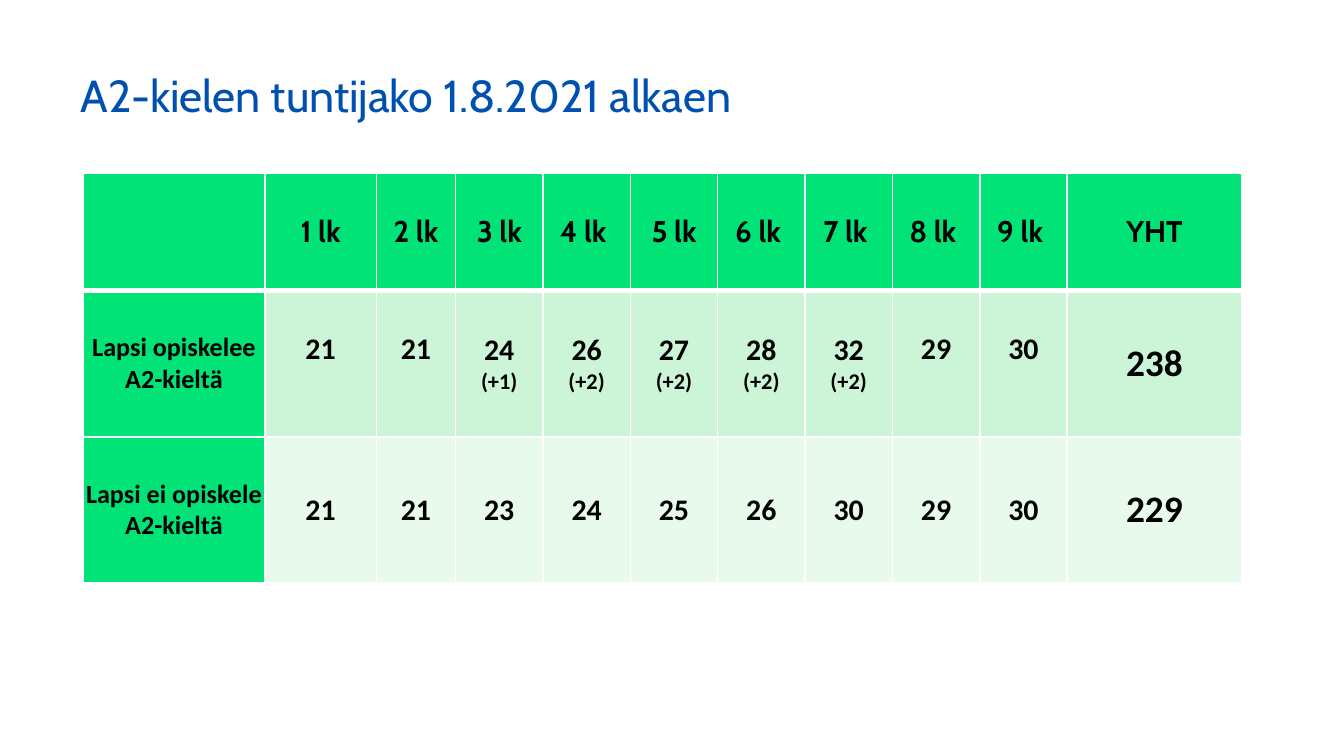
from lxml import etree
from pptx import Presentation
from pptx.dml.color import RGBColor
from pptx.enum.text import MSO_ANCHOR as Anchor, PP_ALIGN as Align
from pptx.oxml.ns import qn
from pptx.util import Inches, Pt


def color(hex_value):
    return RGBColor.from_string(hex_value)


def add_borders(cell, widths):
    """Draw white borders; widths are in points for left, right, top, bottom."""
    properties = cell._tc.get_or_add_tcPr()
    for side, width in zip("LRTB", widths):
        line = etree.SubElement(properties, qn(f"a:ln{side}"), w=str(Pt(width)))
        fill = etree.SubElement(line, qn("a:solidFill"))
        etree.SubElement(fill, qn("a:srgbClr"), val="FFFFFF")


GREEN = "01E376"
ROW_FILLS = [GREEN, "CCF4D6", "E7FAEC"]
COLUMN_WIDTHS = [1.35, 0.83, 0.59] + [0.65] * 7 + [1.3]
ROW_HEIGHTS = [0.87, 1.09, 1.09]
ROWS = [
    ["", "1 lk", "2 lk", "3 lk", "4 lk", "5 lk", "6 lk", "7 lk", "8 lk", "9 lk", "YHT"],
    ["Lapsi opiskelee A2-kieltä", "21", "21", "24\n(+1)", "26\n(+2)", "27\n(+2)",
     "28\n(+2)", "32\n(+2)", "29", "30", "238"],
    ["Lapsi ei opiskele A2-kieltä", "21", "21", "23", "24", "25", "26", "30", "29", "30", "229"],
]
SHIFTED_HEADERS = ("4 lk", "6 lk", "7 lk", "8 lk", "9 lk")

# Widescreen slide, 16:9
presentation = Presentation()
presentation.slide_width = Inches(10)
presentation.slide_height = Inches(10) * 9 // 16
slide = presentation.slides.add_slide(presentation.slide_layouts[5])

# Title
title = slide.shapes.title
title.left, title.top = Inches(0.5), Inches(0.23)
title.width, title.height = Inches(9), Inches(0.94)
title.text_frame.text = "A2-kielen tuntijako 1.8.2021 alkaen"
title.text_frame.vertical_anchor = Anchor.MIDDLE
paragraph = title.text_frame.paragraphs[0]
paragraph.alignment = Align.LEFT
paragraph.font.size = Pt(24)
paragraph.font.name = "Cabin"
paragraph.font.color.rgb = color("0050B0")

# Table grid
table = slide.shapes.add_table(
    len(ROWS), len(COLUMN_WIDTHS), Inches(0.62), Inches(1.29),
    Inches(sum(COLUMN_WIDTHS)), Inches(sum(ROW_HEIGHTS))).table
for column, width in zip(table.columns, COLUMN_WIDTHS):
    column.width = Inches(width)
for row, height in zip(table.rows, ROW_HEIGHTS):
    row.height = Inches(height)

# Lesson hours per grade
last_column = len(COLUMN_WIDTHS) - 1
for row_index, texts in enumerate(ROWS):
    for column_index, text in enumerate(texts):
        cell = table.cell(row_index, column_index)
        add_borders(cell, (1, 1, 3 if row_index == 1 else 1, 3 if row_index == 0 else 1))
        cell.fill.solid()
        cell.fill.fore_color.rgb = color(GREEN if column_index == 0 else ROW_FILLS[row_index])
        cell.vertical_anchor = Anchor.MIDDLE
        cell.margin_left = cell.margin_right = Inches(0.01)
        cell.margin_top = cell.margin_bottom = Inches(0.01)

        # Keep single numbers level with those that have a second line
        if row_index == 1 and 0 < column_index < last_column and "\n" not in text:
            cell.margin_bottom = Inches(0.22)
        if text in SHIFTED_HEADERS:
            cell.margin_right = Inches(0.06)

        size = 16
        if row_index > 0:
            size = {0: 14, last_column: 20}.get(column_index, 16)
        cell.text_frame.text = text
        for paragraph in cell.text_frame.paragraphs:
            paragraph.alignment = Align.CENTER
            paragraph.font.size = Pt(12 if paragraph.text.startswith("(") else size)
            paragraph.font.name = "Cabin" if row_index == 0 else "Calibri"
            paragraph.font.bold = True
            paragraph.font.color.rgb = color("000000")

presentation.save("out.pptx")
